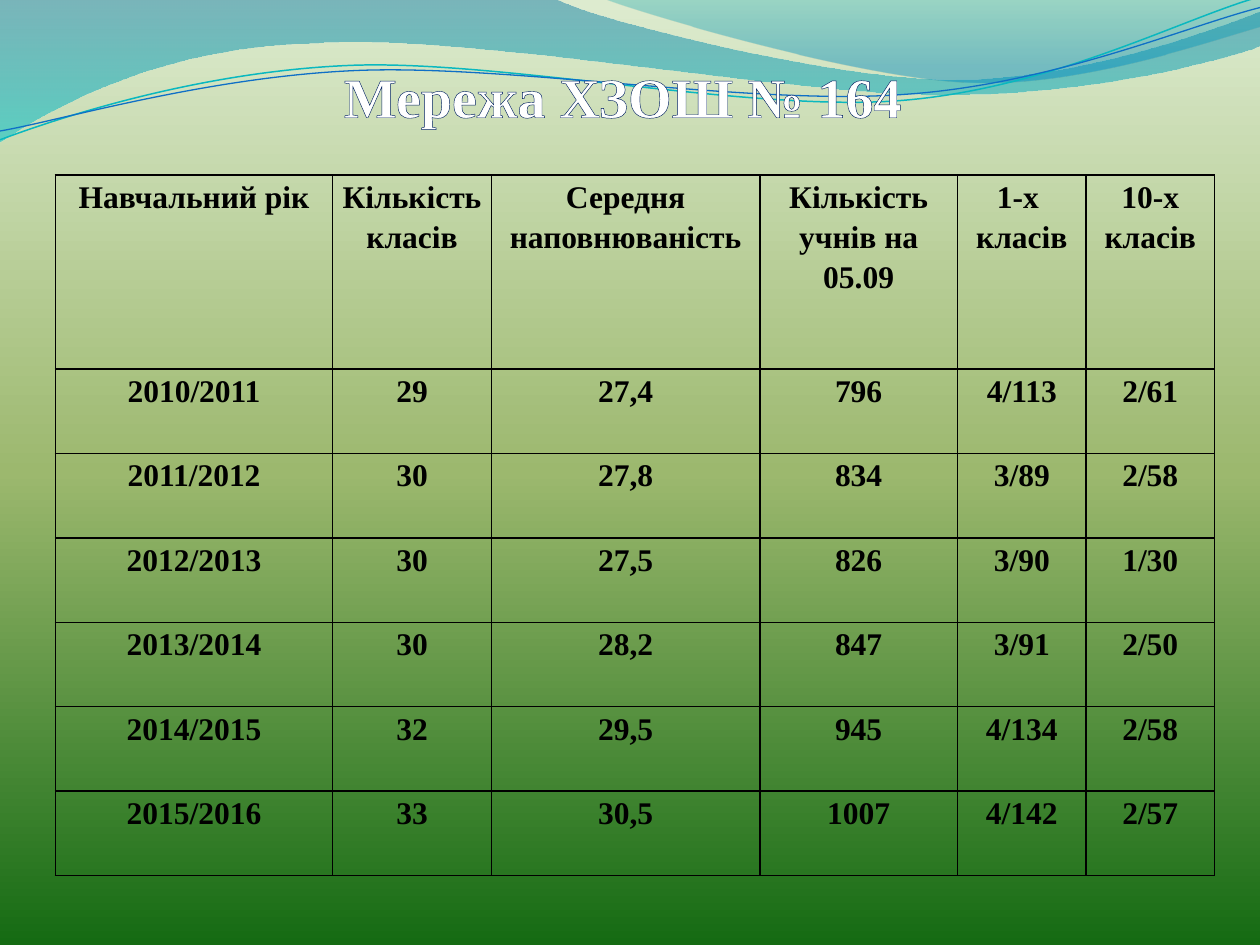
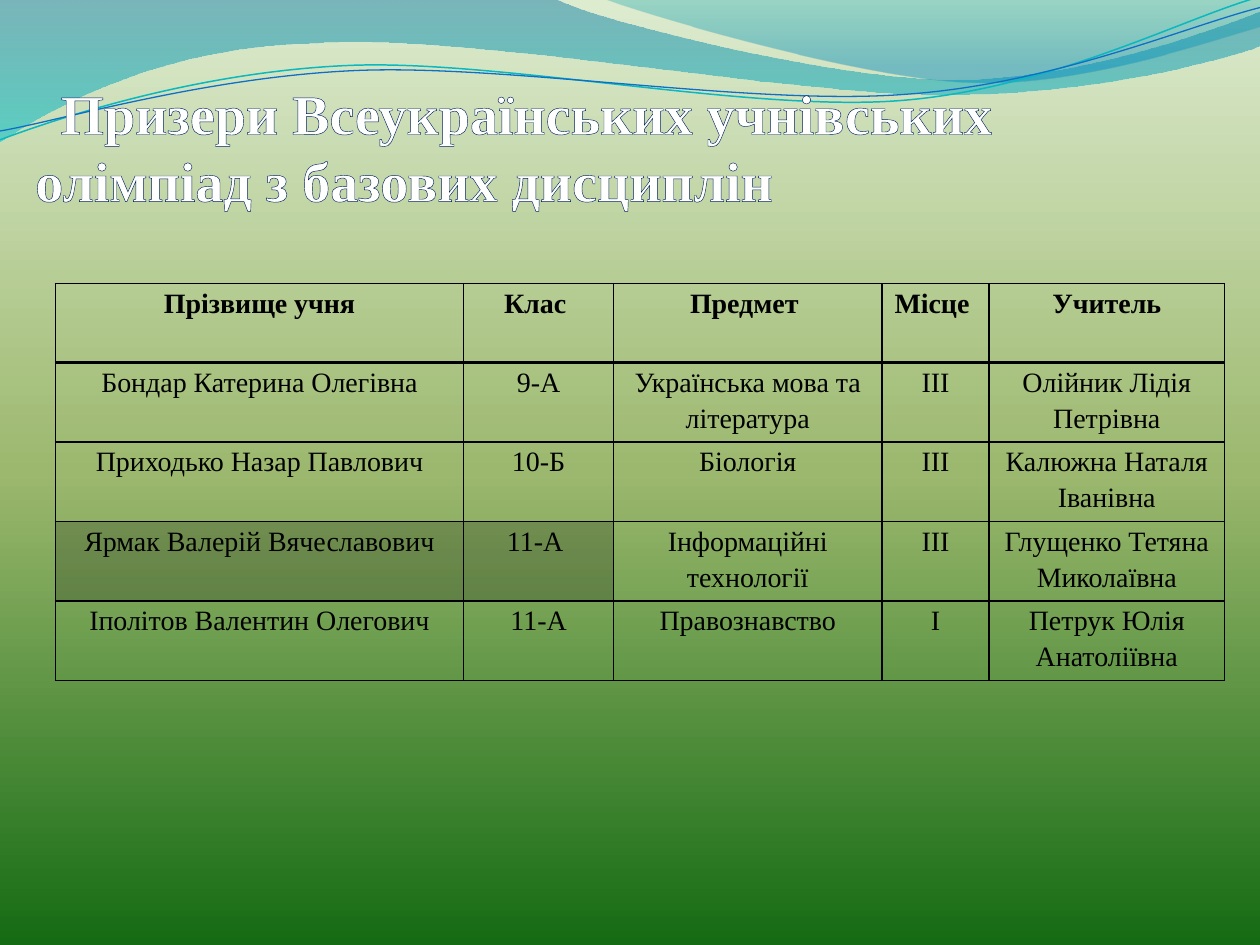
from pptx import Presentation
from pptx.dml.color import RGBColor
from pptx.enum.text import MSO_ANCHOR, MSO_AUTO_SIZE, PP_ALIGN
from pptx.oxml import parse_xml
from pptx.oxml.ns import nsdecls
from pptx.util import Inches, Pt

FONT = "Times New Roman"
BLACK, WHITE, NAVY = "000000", "FFFFFF", "002060"
BACKGROUND = [(0, "DDEBCF", 100), (50, "9CB86E", 100), (100, "156B13", 100)]
TABLE_LEFT = 0.44

BANDS = [
    ([(0, "0074A1", 45), (100, "00C6CF", 55)],
     [(0, 0), (4.4, -0.01),
      (4.76, 0.17, 6.64, 0.63, 7.58, 0.63), (8.53, 0.63, 9.58, 0.26, 10, 0.09),
      (10.01, 0.36),
      (9.83, 0.44, 8.7, 0.76, 7.46, 0.75), (6.22, 0.75, 3.82, 0.28, 2.57, 0.34),
      (1.29, 0.36, 0.46, 0.83, -0.01, 1.13)]),
    ([(0, "00A1A9", 30), (80, "008BBF", 45)],
     [(4.79, -0.01),
      (5.09, 0.11, 6.82, 0.62, 7.69, 0.65), (8.56, 0.69, 9.61, 0.32, 10, 0.21),
      (10, 0)]),
]
WAVES = [
    ("0AB8BF", 0.85,
     [(0, 1.11), (0.48, 0.93, 1.58, 0.57, 2.77, 0.52),
      (3.95, 0.47, 5.93, 0.89, 7.13, 0.8), (8.33, 0.71, 9.38, 0.15, 9.98, -0.02)]),
    ("0F6FC6", 0.75,
     [(0, 1.04), (0.47, 0.96, 1.64, 0.61, 2.83, 0.56),
      (4.03, 0.51, 5.97, 0.84, 7.17, 0.75), (8.36, 0.67, 9.41, 0.21, 10, 0.06)]),
]

NETWORK_ROWS = [
    ["Навчальний рік", "Кількість класів", "Середня наповнюваність",
     "Кількість учнів на 05.09", "1-х \nкласів", "10-х класів"],
    ["2010/2011", "29", "27,4", "796", "4/113", "2/61"],
    ["2011/2012", "30", "27,8", "834", "3/89", "2/58"],
    ["2012/2013", "30", "27,5", "826", "3/90", "1/30"],
    ["2013/2014", "30", "28,2", "847", "3/91", "2/50"],
    ["2014/2015", "32", "29,5", "945", "4/134", "2/58"],
    ["2015/2016", "33", "30,5", "1007", "4/142", "2/57"],
]
WINNER_ROWS = [
    ["Прізвище учня", "Клас ", "Предмет ", "Місце ", "Учитель"],
    ["Бондар Катерина Олегівна", "9-А", "Українська мова та література",
     "ІІІ", "Олійник Лідія Петрівна"],
    ["Приходько Назар Павлович", "10-Б", "Біологія", "ІІІ",
     "Калюжна Наталя Іванівна"],
    ["Ярмак Валерій Вячеславович", "11-А ", "Інформаційні технології", "ІІІ",
     "Глущенко Тетяна Миколаївна"],
    ["Іполітов Валентин Олегович", "11-А", "Правознавство", "І",
     "Петрук Юлія Анатоліївна"],
]


def paint(fill, color):
    fill.solid()
    fill.fore_color.rgb = RGBColor.from_string(color)


def paint_gradient(fill, element, stops):
    paint(fill, BLACK)
    solid = element.xpath(".//a:solidFill")[0]
    marks = "".join(
        f'<a:gs pos="{place * 1000}"><a:srgbClr val="{color}">'
        f'<a:alpha val="{alpha * 1000}"/></a:srgbClr></a:gs>'
        for place, color, alpha in stops)
    solid.getparent().replace(solid, parse_xml(
        f'<a:gradFill rotWithShape="1" {nsdecls("a")}><a:gsLst>{marks}</a:gsLst>'
        '<a:lin ang="5400000" scaled="0"/></a:gradFill>'))


def line_xml(tag, color, points):
    return parse_xml(
        f'<a:{tag} w="{Pt(points)}" {nsdecls("a")}><a:solidFill>'
        f'<a:srgbClr val="{color}"/></a:solidFill></a:{tag}>')


def add_outline(page, steps, close):
    ends = [tuple(map(Inches, step[-2:])) for step in steps]
    builder = page.shapes.build_freeform(*ends[0])
    builder.add_line_segments(ends[1:], close=close)
    shape = builder.convert_to_shape()
    shape.shadow.inherit = False
    for segment, step in zip(shape.element.xpath(".//a:lnTo"), steps[1:]):
        if len(step) == 6:
            points = "".join(
                f'<a:pt x="{Inches(x) - shape.left}" y="{Inches(y) - shape.top}"/>'
                for x, y in zip(step[::2], step[1::2]))
            segment.getparent().replace(segment, parse_xml(
                f'<a:cubicBezTo {nsdecls("a")}>{points}</a:cubicBezTo>'))
    return shape


def decorate_master(deck, page):
    master = deck.slide_master
    paint_gradient(master.background.fill, master.element, BACKGROUND)
    shapes = []
    for stops, steps in BANDS:
        band = add_outline(page, steps, True)
        paint_gradient(band.fill, band.element, stops)
        band.line.fill.background()
        shapes.append(band)
    for color, width, steps in WAVES:
        wave = add_outline(page, steps, False)
        wave.fill.background()
        paint(wave.line.fill, color)
        wave.line.width = Pt(width)
        shapes.append(wave)
    for index, shape in enumerate(shapes):
        shape.element.xpath(".//p:cNvPr")[0].set("id", str(100 + index))
        master.shapes.element.insert(2 + index, shape.element)


def add_text(para, text, size, color, bold):
    span = para.add_run()
    span.text = text
    span.font.name = FONT
    span.font.size = Pt(size)
    span.font.bold = bold
    paint(span.font.fill, color)


def set_margins(target, left, top, right, bottom):
    target.margin_left, target.margin_top = Inches(left), Inches(top)
    target.margin_right, target.margin_bottom = Inches(right), Inches(bottom)


def fill_title(page, box, text, align, anchor, margins, indent=0):
    title = page.shapes.title
    title.left, title.top, title.width, title.height = map(Inches, box)
    frame = title.text_frame
    frame.word_wrap = True
    frame.auto_size = MSO_AUTO_SIZE.NONE
    frame.vertical_anchor = anchor
    set_margins(frame, *margins)
    para = frame.paragraphs[0]
    para.alignment = align
    add_text(para, text, 32, WHITE, True)
    title.element.xpath(".//a:pPr")[0].set("indent", str(Inches(indent)))
    title.element.xpath(".//a:rPr")[0].insert(0, line_xml("ln", NAVY, 0.75))


def add_grid(page, left, top, widths, heights, rows, size, bold_body,
             header_line=1, shaded=()):
    frame = page.shapes.add_table(
        len(rows), len(widths), Inches(left), Inches(top),
        Inches(sum(widths)), Inches(sum(heights)))
    table = frame.table
    table.first_row = table.horz_banding = False
    for column, width in zip(table.columns, widths):
        column.width = Inches(width)
    for row, height in zip(table.rows, heights):
        row.height = Inches(height)
    for index, (cell, element) in enumerate(
            zip(table.iter_cells(), frame.element.xpath(".//a:tc"))):
        row, column = divmod(index, len(widths))
        set_margins(cell, 0.07, 0, 0.07, 0)
        for number, text in enumerate(rows[row][column].split("\n")):
            para = (cell.text_frame.add_paragraph() if number
                    else cell.text_frame.paragraphs[0])
            para.alignment = PP_ALIGN.CENTER
            para.line_spacing = 1.15
            add_text(para, text, size, BLACK, bold_body or row == 0)
        properties = element.get_or_add_tcPr()
        if (row, column) in shaded:
            paint(cell.fill, BLACK)
            properties.xpath("./a:solidFill/a:srgbClr")[0].append(
                parse_xml(f'<a:alpha val="20000" {nsdecls("a")}/>'))
        else:
            cell.fill.background()
        for place, side in enumerate(("lnL", "lnR", "lnT", "lnB")):
            width = header_line if row == 0 and side == "lnB" else 1
            properties.insert(place, line_xml(side, BLACK, width))


def build_network(page):
    add_grid(page, TABLE_LEFT, 1.39, [2.2, 1.26, 2.13, 1.57, 1.02, 1.02],
             [1.54] + [0.67] * 6, NETWORK_ROWS, 18, True)
    fill_title(page, (0, 0.44, 10, 0.64), "Мережа ХЗОШ № 164 ",
               PP_ALIGN.CENTER, MSO_ANCHOR.TOP, (0.1, 0.05, 0.1, 0.05))


def build_winners(page):
    fill_title(page, (0.28, 0.44, 9, 1.25),
               "Призери Всеукраїнських учнівських олімпіад з базових дисциплін",
               PP_ALIGN.LEFT, MSO_ANCHOR.BOTTOM, (0, 0.05, 0, 0), 0.2)
    add_grid(page, TABLE_LEFT, 2.25, [3.24, 1.19, 2.13, 0.85, 1.87], [0.63] * 5,
             WINNER_ROWS, 16, False, header_line=2, shaded={(3, 0), (3, 1)})


def main():
    deck = Presentation()
    deck.slide_width, deck.slide_height = Inches(10), Inches(7.5)
    title_only = deck.slide_layouts[5]
    pages = [deck.slides.add_slide(title_only) for _ in range(2)]
    decorate_master(deck, pages[0])
    build_network(pages[0])
    build_winners(pages[1])
    deck.save("out.pptx")


if __name__ == "__main__":
    main()
